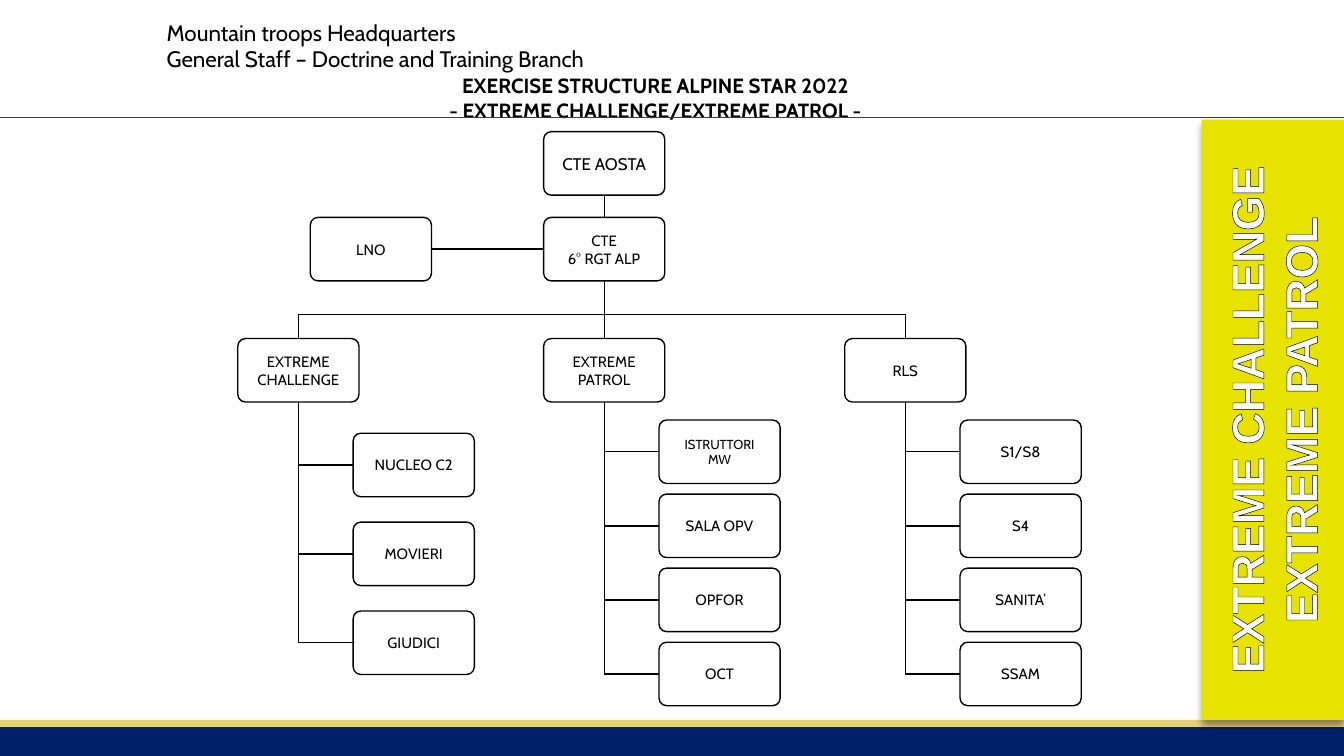
from typing import NamedTuple

from pptx import Presentation
from pptx.dml.color import RGBColor
from pptx.enum.shapes import MSO_CONNECTOR, MSO_SHAPE
from pptx.enum.text import MSO_ANCHOR, MSO_AUTO_SIZE, PP_ALIGN
from pptx.oxml import parse_xml
from pptx.oxml.ns import nsdecls
from pptx.util import Cm, Pt

SLIDE_W, SLIDE_H = 25.4, 14.29
BOX_W, BOX_H = 2.29, 1.2
CHILD_DX = 2.18  # from a branch's trunk to the centre of its children
MAIN_X = 11.42
BUS_Y, BRANCH_Y = 5.94, 6.4
BLACK, WHITE = "000000", "FFFFFF"


class Box(NamedTuple):
    label: str
    x: float  # centre
    y: float  # top
    size: float = 8


class Branch(NamedTuple):
    head: Box
    children: list[Box]


def children(trunk: float, top: float, pitch: float, *labels: str) -> list[Box]:
    """Stack boxes at an equal pitch to the right of a trunk."""
    return [Box(label, trunk + CHILD_DX, top + i * pitch)
            for i, label in enumerate(labels)]


HQ = Box("CTE AOSTA", MAIN_X, 2.49, 9)
REGIMENT = Box("CTE\n6° RGT ALP", MAIN_X, 4.11)
LIAISON = Box("LNO", 7.01, REGIMENT.y)
CHALLENGE_X, RLS_X = 5.64, 17.11
instructors, *patrol_rest = children(
    MAIN_X, 7.94, 1.4, "ISTRUTTORI MW", "SALA OPV", "OPFOR", "OCT")
BRANCHES = [
    Branch(Box("EXTREME CHALLENGE", CHALLENGE_X, BRANCH_Y),
           children(CHALLENGE_X, 8.19, 1.68, "NUCLEO C2", "MOVIERI", "GIUDICI")),
    Branch(Box("EXTREME PATROL", MAIN_X, BRANCH_Y),
           [instructors._replace(size=7), *patrol_rest]),
    Branch(Box("RLS", RLS_X, BRANCH_Y),
           children(RLS_X, 7.94, 1.4, "S1/S8", "S4", "SANITA’", "SSAM")),
]


def rgb(color: str) -> RGBColor:
    return RGBColor.from_string(color)


def style_text(tf, size: float, name="Cabin", color=BLACK, bold=False,
               align=PP_ALIGN.CENTER) -> None:
    tf.word_wrap = True
    for p in tf.paragraphs:
        p.alignment = align
        p.font.size, p.font.name, p.font.bold = Pt(size), name, bold
        p.font.color.rgb = rgb(color)


def add_line(s, x1: float, y1: float, x2: float, y2: float,
             color=BLACK, width=0.75) -> None:
    line = s.shapes.add_connector(MSO_CONNECTOR.STRAIGHT, Cm(x1), Cm(y1), Cm(x2), Cm(y2))
    line.line.color.rgb = rgb(color)
    line.line.width = Pt(width)
    line._element.spPr.append(parse_xml(f"<a:effectLst {nsdecls('a')}/>"))


def add_bar(s, x: float, y: float, w: float, h: float, color: str):
    sp = s.shapes.add_shape(MSO_SHAPE.RECTANGLE, Cm(x), Cm(y), Cm(w), Cm(h))
    sp.shadow.inherit = False
    sp.fill.solid()
    sp.fill.fore_color.rgb = rgb(color)
    sp.line.fill.background()
    return sp


def add_box(s, box: Box) -> None:
    sp = s.shapes.add_shape(MSO_SHAPE.ROUNDED_RECTANGLE, Cm(box.x - BOX_W / 2),
                            Cm(box.y), Cm(BOX_W), Cm(BOX_H))
    sp.adjustments[0] = 0.12
    sp.shadow.inherit = False
    sp.fill.background()
    sp.line.color.rgb = rgb(BLACK)
    sp.line.width = Pt(0.75)
    tf = sp.text_frame
    tf.text = box.label
    tf.vertical_anchor = MSO_ANCHOR.MIDDLE
    style_text(tf, box.size)


def add_branch(s, branch: Branch) -> None:
    head = branch.head
    add_line(s, head.x, BUS_Y, head.x, head.y)
    add_line(s, head.x, head.y + BOX_H, head.x, branch.children[-1].y + BOX_H / 2)
    add_box(s, head)
    for child in branch.children:
        middle = child.y + BOX_H / 2
        add_line(s, head.x, middle, child.x - BOX_W / 2, middle)
        add_box(s, child)


def add_chart_tree(s) -> None:
    add_line(s, MAIN_X, HQ.y + BOX_H, MAIN_X, REGIMENT.y)
    middle = REGIMENT.y + BOX_H / 2
    add_line(s, LIAISON.x + BOX_W / 2, middle, MAIN_X - BOX_W / 2, middle)
    add_line(s, MAIN_X, REGIMENT.y + BOX_H, MAIN_X, BUS_Y)
    add_line(s, CHALLENGE_X, BUS_Y, RLS_X, BUS_Y)
    for box in (HQ, REGIMENT, LIAISON):
        add_box(s, box)
    for branch in BRANCHES:
        add_branch(s, branch)


def add_side_banner(s) -> None:
    sp = add_bar(s, 22.71, 2.26, SLIDE_W - 22.71, 11.35, "E7E200")
    sp._element.spPr.find("{*}effectLst").append(parse_xml(
        f'<a:outerShdw {nsdecls("a")} blurRad="{Pt(4)}" dist="{Pt(3)}" dir="5400000" '
        f'rotWithShape="0"><a:srgbClr val="{BLACK}"><a:alpha val="40000"/>'
        '</a:srgbClr></a:outerShdw>'))
    tf = sp.text_frame
    tf.text = "EXTREME CHALLENGE\nEXTREME PATROL"
    tf.vertical_anchor = MSO_ANCHOR.MIDDLE
    tf._txBody.bodyPr.set("vert", "vert270")
    style_text(tf, 24, "Arial", WHITE, bold=True)
    for p in tf.paragraphs:
        for r in p.runs:
            r._r.get_or_add_rPr().insert(0, parse_xml(
                f'<a:ln {nsdecls("a")} w="{Pt(0.75)}"><a:solidFill>'
                f'<a:srgbClr val="{BLACK}"/></a:solidFill></a:ln>'))


def add_heading(s) -> None:
    office = s.shapes.add_textbox(Cm(2.9), Cm(0.23), Cm(11.66), Cm(2))
    office.text_frame.text = ("Mountain troops Headquarters\v"
                              "General Staff – Doctrine and Training Branch")
    style_text(office.text_frame, 12, align=PP_ALIGN.LEFT)

    title = s.shapes.title
    title.left, title.top, title.width, title.height = Cm(2.49), Cm(1.37), Cm(19.8), Cm(0.95)
    tf = title.text_frame
    tf.text = "EXERCISE STRUCTURE ALPINE STAR 2022\n- EXTREME CHALLENGE/EXTREME PATROL -"
    tf.auto_size = MSO_AUTO_SIZE.NONE
    tf.vertical_anchor = MSO_ANCHOR.MIDDLE
    tf.margin_top = tf.margin_bottom = 0
    style_text(tf, 11, bold=True)


def main() -> None:
    prs = Presentation()
    prs.slide_width, prs.slide_height = Cm(SLIDE_W), Cm(SLIDE_H)
    s = prs.slides.add_slide(prs.slide_layouts[5])
    add_bar(s, 0, 13.64, SLIDE_W, SLIDE_H - 13.64, "002169")
    add_bar(s, 0, 13.61, SLIDE_W, 0.13, "E4D079")
    add_line(s, 0, 2.21, SLIDE_W, 2.21, "0B4395", 0.25)
    add_heading(s)
    add_chart_tree(s)
    add_side_banner(s)
    prs.save("out.pptx")


if __name__ == "__main__":
    main()
